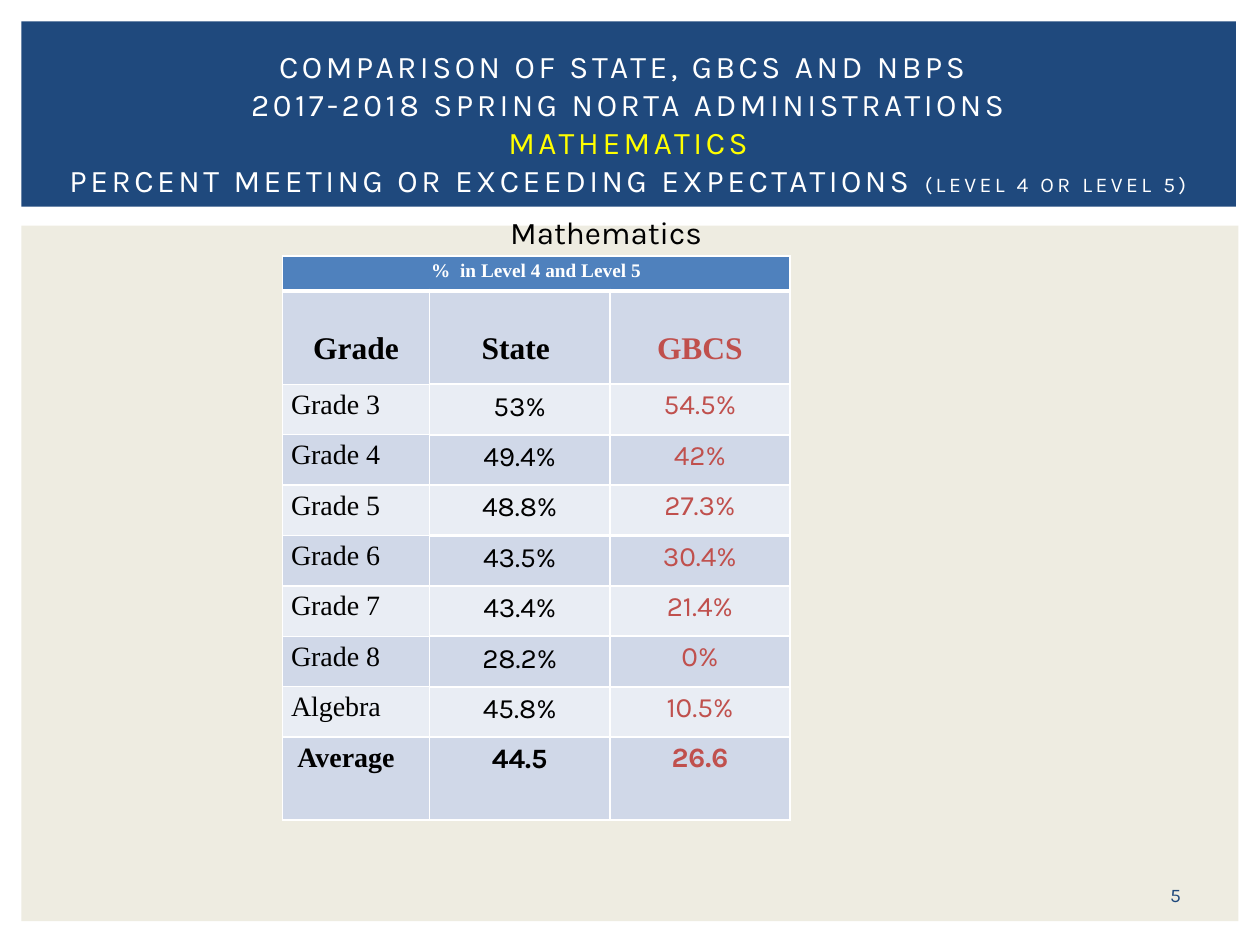
from lxml import etree
from pptx import Presentation
from pptx.dml.color import RGBColor
from pptx.enum.shapes import MSO_SHAPE
from pptx.enum.text import MSO_ANCHOR, PP_ALIGN
from pptx.oxml.ns import qn
from pptx.util import Inches, Pt

RECT = MSO_SHAPE.RECTANGLE
MIDDLE, TOP = MSO_ANCHOR.MIDDLE, MSO_ANCHOR.TOP
LEFT, CENTER = PP_ALIGN.LEFT, PP_ALIGN.CENTER

WHITE = RGBColor(0xFF, 0xFF, 0xFF)
BLACK = RGBColor(0, 0, 0)
YELLOW = RGBColor(0xFF, 0xFF, 0)
NAVY = RGBColor(0x1F, 0x49, 0x7D)
CREAM = RGBColor(0xEE, 0xEC, 0xE1)
BLUE = RGBColor(0x4F, 0x81, 0xBD)
RED = RGBColor(0xC0, 0x50, 0x4D)
BANDS = [RGBColor(0xE9, 0xED, 0xF4), RGBColor(0xD0, 0xD8, 0xE8)]
SANS, SERIF = "Karla", "Times New Roman"


def write(p, text, size, name, color, align=CENTER, bold=False):
    p.alignment = align
    f = p.font
    f.size, f.name, f.bold = Pt(size), name, bold
    f.color.rgb = color
    r = p.add_run()
    r.text = text


def set_borders(cell, side, top, bottom):
    tcPr = cell._tc.get_or_add_tcPr()
    widths = {"lnL": side, "lnR": side, "lnT": top, "lnB": bottom}
    for i, (tag, width) in enumerate(widths.items()):
        ln = etree.Element(qn(f"a:{tag}"), w=str(Pt(width)))
        fill = etree.SubElement(ln, qn("a:solidFill"))
        etree.SubElement(fill, qn("a:srgbClr"), val=str(WHITE))
        tcPr.insert(i, ln)


prs = Presentation()
prs.slide_width, prs.slide_height = Inches(10), Inches(7.5)
s = prs.slides.add_slide(prs.slide_layouts[6])

# Body panel and title band
for x, y, w, h, color in [(0.17, 1.79, 9.66, 5.52, CREAM),
                          (0.17, 0.17, 9.64, 1.47, NAVY)]:
    sp = s.shapes.add_shape(RECT, Inches(x), Inches(y), Inches(w), Inches(h))
    sp.shadow.inherit = False
    sp.fill.solid()
    sp.fill.fore_color.rgb = color
    sp.line.fill.background()

# Slide number
sp = s.shapes.add_textbox(Inches(9.01), Inches(6.95), Inches(0.64), Inches(0.3))
tf = sp.text_frame
tf.word_wrap = True
tf.vertical_anchor = MIDDLE
write(tf.paragraphs[0], "5", 11, SANS, NAVY)

# Results table
rows = [
    ("Grade", "State ", "GBCS"),
    ("Grade 3", "53%", "54.5%"),
    ("Grade 4", "49.4%", "42%"),
    ("Grade 5", "48.8%", "27.3%"),
    ("Grade 6", "43.5%", "30.4%"),
    ("Grade 7", "43.4%", "21.4%"),
    ("Grade 8", "28.2%", "0%"),
    ("Algebra", "45.8%", "10.5%"),
    ("Average", "44.5", "26.6"),
]
heights = [0.28, 0.74] + [0.4] * 7 + [0.66]
widths = [1.17, 1.43, 1.43]
table = s.shapes.add_table(len(heights), len(widths), Inches(2.24), Inches(2.03),
                           Inches(sum(widths)), Inches(sum(heights))).table
table.horz_banding = False
for row, h in zip(table.rows, heights):
    row.height = Inches(h)
for col, w in zip(table.columns, widths):
    col.width = Inches(w)
for cell in table.iter_cells():
    cell.margin_left = cell.margin_right = Inches(0.07)
    cell.margin_top = cell.margin_bottom = Inches(0.04)
    cell.vertical_anchor = TOP
    cell.fill.solid()

# Table heading across all columns
for cell in table.rows[0].cells:
    cell.fill.fore_color.rgb = BLUE
    set_borders(cell, 1, 1, 3)
head = table.cell(0, 0)
head.merge(table.cell(0, 2))
write(head.text_frame.paragraphs[0], "%  in Level 4 and Level 5", 11, SERIF, WHITE, bold=True)

# Column heads, grades and average
for i, values in enumerate(rows, 1):
    is_head, is_average = i == 1, i == len(rows)
    for j, value in enumerate(values):
        cell = table.cell(i, j)
        cell.fill.fore_color.rgb = BANDS[i % 2]
        edge = 1 if j == 0 else 1.5
        set_borders(cell, 1, 3 if is_head else edge, edge)
        if is_head:
            cell.margin_top = Inches(0.32)
        elif j == 1:
            cell.margin_top = Inches(0.05)
        elif is_average and j == 0:
            cell.margin_left = Inches(0.12)
        write(cell.text_frame.paragraphs[0], value,
              18 if is_head else 16,
              SERIF if is_head or j == 0 else SANS,
              RED if j == 2 else BLACK,
              LEFT if j == 0 and not is_head else CENTER,
              is_head or is_average)

# Title
sp = s.shapes.add_textbox(Inches(0.4), Inches(0.4), Inches(9.17), Inches(1.15))
tf = sp.text_frame
tf.word_wrap = True
tf.vertical_anchor = MIDDLE
lines = [
    ("COMPARISON OF STATE, GBCS AND NBPS ", WHITE),
    ("2017-2018 SPRING NORTA ADMINISTRATIONS", WHITE),
    ("MATHEMATICS", YELLOW),
    ("PERCENT MEETING OR EXCEEDING EXPECTATIONS ", WHITE),
]
for i, (text, color) in enumerate(lines):
    p = tf.add_paragraph() if i else tf.paragraphs[0]
    write(p, text, 18, SANS, color)
r = p.add_run()
r.text = "(LEVEL 4 OR LEVEL 5)"
r.font.size = Pt(12)
# Letter spacing of 2 points
for p in tf.paragraphs:
    for r in p.runs:
        r._r.get_or_add_rPr().set("spc", "200")

# Table caption
sp = s.shapes.add_textbox(Inches(3.95), Inches(1.64), Inches(2.11), Inches(0.4))
tf = sp.text_frame
tf.word_wrap = True
write(tf.paragraphs[0], "Mathematics", 18, SANS, BLACK, LEFT)

prs.save("out.pptx")
